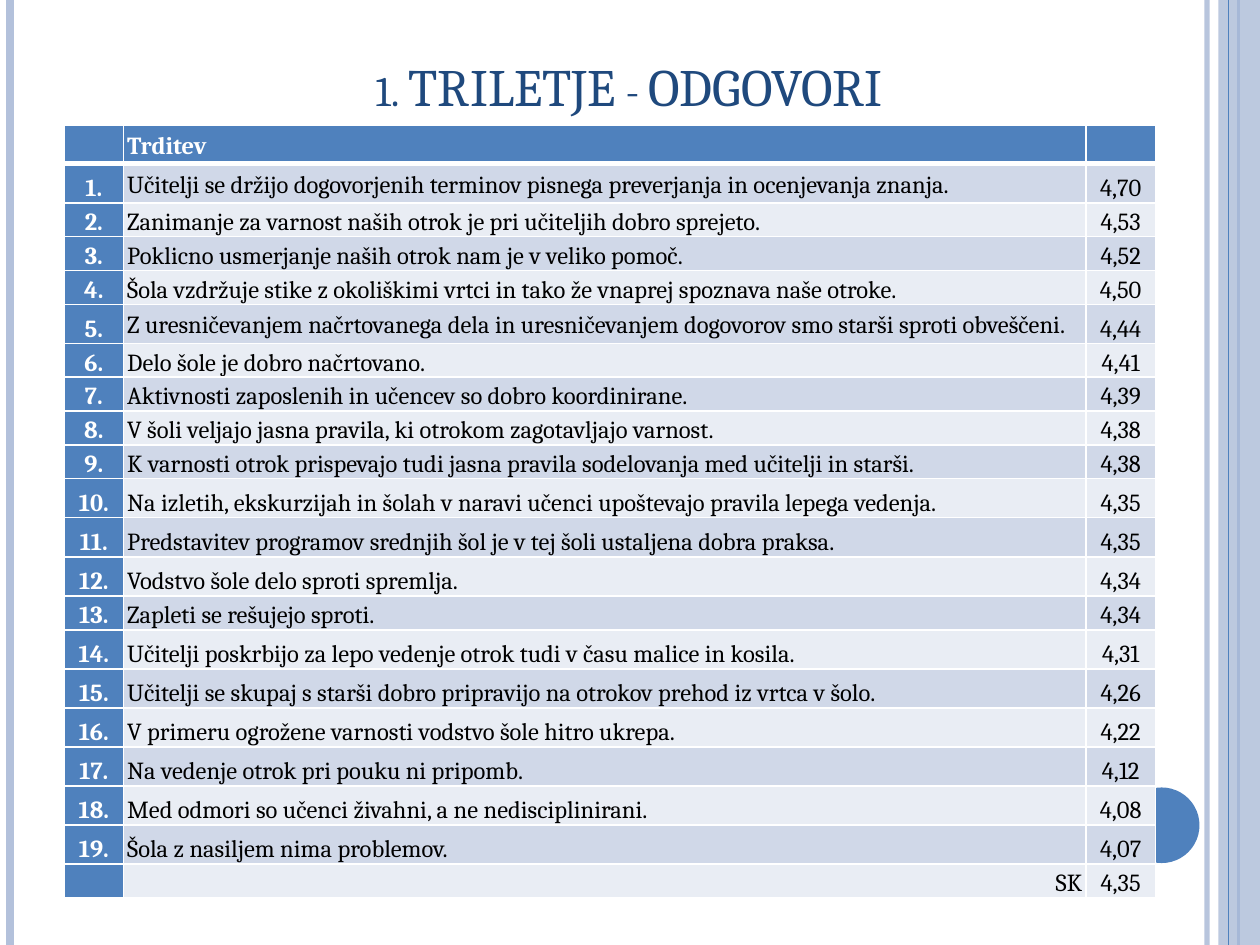
from lxml import etree
from pptx import Presentation
from pptx.dml.color import RGBColor
from pptx.enum.shapes import MSO_CONNECTOR, MSO_SHAPE
from pptx.enum.text import MSO_ANCHOR, PP_ALIGN
from pptx.oxml.ns import qn
from pptx.util import Inches, Pt

LINE = MSO_CONNECTOR.STRAIGHT
RECT, OVAL = MSO_SHAPE.RECTANGLE, MSO_SHAPE.OVAL
MIDDLE, BOTTOM = MSO_ANCHOR.MIDDLE, MSO_ANCHOR.BOTTOM
LEFT, CENTER, RIGHT = PP_ALIGN.LEFT, PP_ALIGN.CENTER, PP_ALIGN.RIGHT

FONT = "Cambria"
BLUE, PALE, NAVY = "4F81BD", "B3C1DB", "1F497D"
WHITE, BLACK = "FFFFFF", "000000"
BANDS = ("E9EDF4", "D0D8E8")
COL_WIDTHS = (0.47, 7.64, 0.55)
TALL, MEDIUM, SHORT = 0.31, 0.27, 0.16

ANSWERS = [
    ("Učitelji se držijo dogovorjenih terminov pisnega preverjanja in ocenjevanja znanja.", "4,70", TALL),
    ("Zanimanje za varnost naših otrok je pri učiteljih dobro sprejeto.", "4,53", SHORT),
    ("Poklicno usmerjanje naših otrok nam je v veliko pomoč.", "4,52", SHORT),
    ("Šola vzdržuje stike z okoliškimi vrtci in tako že vnaprej spoznava naše otroke.", "4,50", SHORT),
    ("Z uresničevanjem načrtovanega dela in uresničevanjem dogovorov smo starši sproti obveščeni.", "4,44", TALL),
    ("Delo šole je dobro načrtovano.", "4,41", SHORT),
    ("Aktivnosti zaposlenih in učencev so dobro koordinirane.", "4,39", SHORT),
    ("V šoli veljajo jasna pravila, ki otrokom zagotavljajo varnost.", "4,38", SHORT),
    ("K varnosti otrok prispevajo tudi jasna pravila sodelovanja med učitelji in starši.", "4,38", SHORT),
    ("Na izletih, ekskurzijah in šolah v naravi učenci upoštevajo pravila lepega vedenja.", "4,35", TALL),
    ("Predstavitev programov srednjih šol je v tej šoli ustaljena dobra praksa.", "4,35", TALL),
    ("Vodstvo šole delo sproti spremlja.", "4,34", TALL),
    ("Zapleti se rešujejo sproti.", "4,34", MEDIUM),
    ("Učitelji poskrbijo za lepo vedenje otrok tudi v času malice in kosila.", "4,31", TALL),
    ("Učitelji se skupaj s starši dobro pripravijo na otrokov prehod iz vrtca v šolo.", "4,26", TALL),
    ("V primeru ogrožene varnosti vodstvo šole hitro ukrepa.", "4,22", TALL),
    ("Na vedenje otrok pri pouku ni pripomb.", "4,12", TALL),
    ("Med odmori so učenci živahni, a ne nedisciplinirani.", "4,08", TALL),
    ("Šola z nasiljem nima problemov.", "4,07", TALL),
]
MIDDLE_ROWS = (0, 1, 5, 7, 8)


def rgb(value):
    """Turn a hex string into a colour."""
    return RGBColor.from_string(value)


def set_alpha(sp, percent):
    """Make the first solid colour of a shape partly transparent."""
    color = next(sp._element.spPr.iter(qn("a:srgbClr")))
    etree.SubElement(color, qn("a:alpha")).set("val", str(percent * 1000))


def add_rule(s, x, top, height, color, weight):
    """Draw a vertical rule."""
    line = s.shapes.add_connector(LINE, Inches(x), Inches(top), Inches(x), Inches(top + height))
    line.line.color.rgb = rgb(color)
    line.line.width = Pt(weight)
    etree.SubElement(line._element.spPr, qn("a:effectLst"))
    return line


def add_plain(s, kind, left, top, width, height, color):
    """Draw a filled shape without an outline."""
    sp = s.shapes.add_shape(kind, Inches(left), Inches(top), Inches(width), Inches(height))
    sp.shadow.inherit = False
    sp.fill.solid()
    sp.fill.fore_color.rgb = rgb(color)
    sp.line.fill.background()
    return sp


def add_frame(s, left, top, width, height):
    """Draw the rules, side band and dot along the slide edges."""
    right = left + width
    set_alpha(add_rule(s, right - 0.42, top, height, PALE, 3), 93)
    add_rule(s, left + 0.08, top, height, PALE, 4.5)
    add_rule(s, right - 0.17, top, height, BLUE, 1.5)
    set_alpha(add_plain(s, RECT, right - 0.33, top, 0.33, height, PALE), 87)
    add_rule(s, right - 0.25, top, height, BLUE, 0.75)
    add_plain(s, OVAL, right - 1.08, top + height - 1.25, 0.6, 0.6, BLUE)


def style_font(p, size, color, bold=False):
    """Set the font of a paragraph."""
    p.font.name = FONT
    p.font.size = Pt(size)
    p.font.bold = bold
    p.font.color.rgb = rgb(color)


def add_title(s, left, top, width, height):
    """Place the centred small-caps title."""
    tf = s.shapes.add_textbox(Inches(left), Inches(top), Inches(width), Inches(height)).text_frame
    tf.word_wrap = True
    tf.vertical_anchor = BOTTOM
    p = tf.paragraphs[0]
    p.alignment = CENTER
    style_font(p, 30, NAVY)
    r = p.add_run()
    r.text = "1. TRILETJE - ODGOVORI"
    r._r.get_or_add_rPr().set("cap", "small")


def set_borders(cell, top, bottom):
    """Give a cell white borders with the given top and bottom weights."""
    tc_pr = cell._tc.get_or_add_tcPr()
    for side, weight in (("L", 1), ("R", 1), ("T", top), ("B", bottom)):
        ln = etree.SubElement(tc_pr, qn(f"a:ln{side}"), w=str(Pt(weight)))
        fill = etree.SubElement(ln, qn("a:solidFill"))
        etree.SubElement(fill, qn("a:srgbClr"), val=WHITE)


def fill_cell(cell, text, row, col, align):
    """Write and style one table cell."""
    heading = row == 0 or col == 0
    set_borders(cell, 3 if row == 1 else 1, 3 if row == 0 else 1)
    cell.fill.solid()
    cell.fill.fore_color.rgb = rgb(BLUE if heading else BANDS[row % 2])
    cell.margin_left = cell.margin_right = Inches(0.03)
    cell.margin_top = cell.margin_bottom = 0
    cell.vertical_anchor = MIDDLE if col == 1 and row in MIDDLE_ROWS else BOTTOM
    cell.text = text
    p = cell.text_frame.paragraphs[0]
    p.alignment = align
    p.line_spacing = 1.15
    style_font(p, 14, WHITE if heading else BLACK, heading)


def add_answers(s, left, top, width, height):
    """Place the table of statements and mean scores."""
    rows = [("", "Trditev", "", TALL)]
    rows += [(f"{n}.", *answer) for n, answer in enumerate(ANSWERS, 1)]
    rows.append(("", "SK", "4,35", SHORT))
    frame = s.shapes.add_table(len(rows), len(COL_WIDTHS), Inches(left), Inches(top),
                               Inches(width), Inches(height))
    table = frame.table
    for column, col_width in zip(table.columns, COL_WIDTHS):
        column.width = Inches(col_width)
    for i, (*texts, row_height) in enumerate(rows):
        table.rows[i].height = Inches(row_height)
        text_align = RIGHT if i == len(rows) - 1 else LEFT
        for j, (text, align) in enumerate(zip(texts, (CENTER, text_align, CENTER))):
            fill_cell(table.cell(i, j), text, i, j, align)
    frame.height = Inches(height)


def main():
    """Build and save the slide."""
    prs = Presentation()
    prs.slide_width, prs.slide_height = Inches(10), Inches(7.5)
    s = prs.slides.add_slide(prs.slide_layouts[6])
    add_frame(s, 0, 0, 10, 7.5)
    add_title(s, 0.91, 0.21, 8.17, 0.77)
    add_answers(s, 0.51, 0.99, 8.66, 6.4)
    prs.save("out.pptx")


if __name__ == "__main__":
    main()
